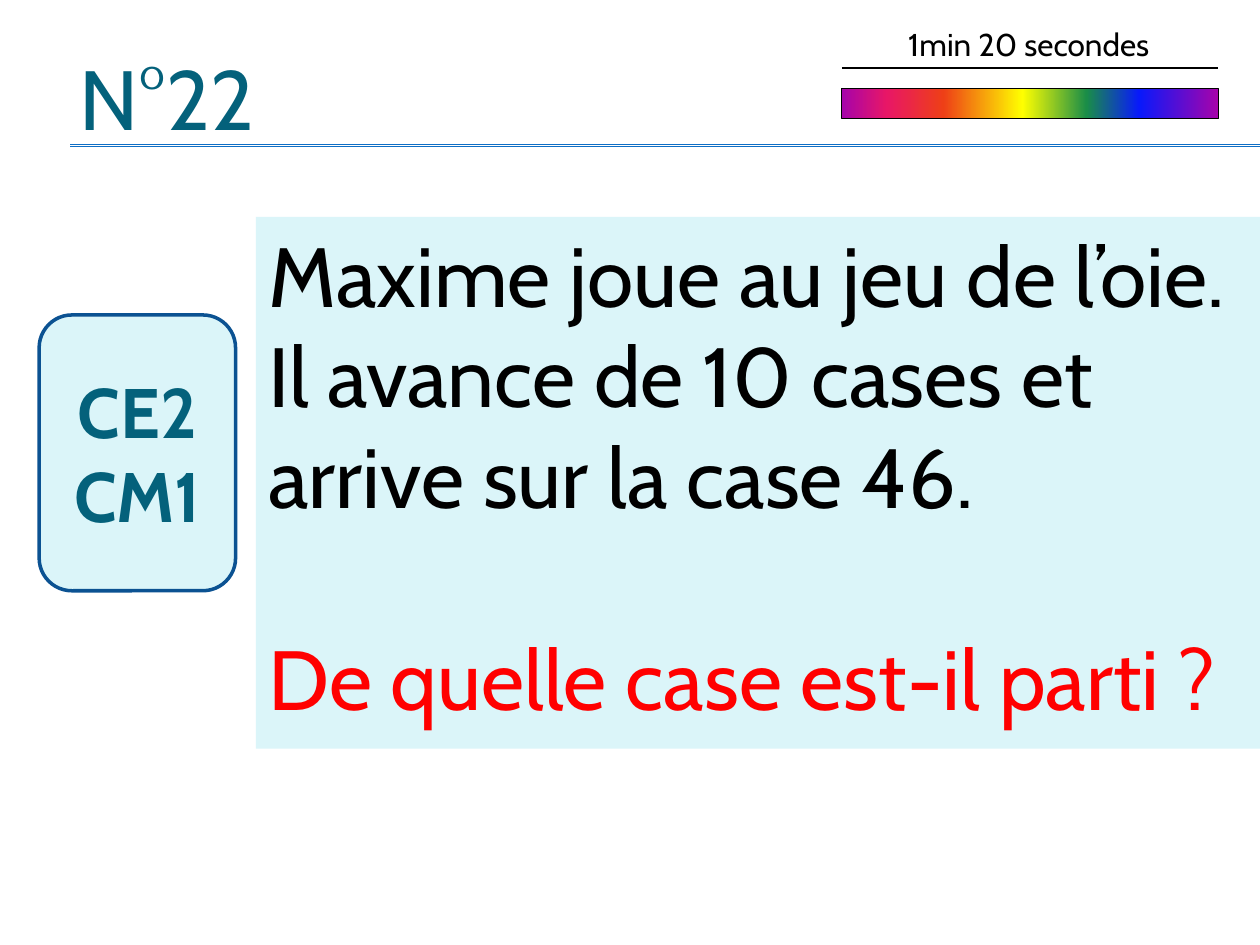
from lxml.etree import SubElement
from pptx import Presentation
from pptx.dml.color import RGBColor
from pptx.enum.shapes import MSO_CONNECTOR, MSO_SHAPE
from pptx.enum.text import MSO_ANCHOR, MSO_AUTO_SIZE, PP_ALIGN
from pptx.oxml.ns import qn
from pptx.util import Cm, Pt

# Content
TITLE = "N°22"
LEVELS = "CE2 CM1"
TIME = "1min 20 secondes"
PROBLEM = [
    ("Maxime joue au jeu de l’oie. Il avance de 10 cases et arrive sur la case 46.", "text"),
    ("De quelle case est-il parti ?", "question"),
]
RAINBOW = [(0, "A603AB"), (12, "E81766"), (27, "EE3F17"), (48, "FFFF00"),
           (65, "1A8D48"), (79, "0819FB"), (100, "A603AB")]

THEME = {
    "font": "Cabin",
    "colors": {"text": "000000", "question": "FF0000", "heading": "04617B",
               "panel": "DBF5F9", "rule": "0F6FC6", "border": "0B5292"},
    "sizes": {"large": 48, "level": 40, "time": 18},
}

# Layout in centimetres: left, top, width, height
PAGE_WIDTH, PAGE_HEIGHT = 25.4, 19.05
TITLE_AREA = (0.79, 0.79, 5.16, 2.34)
PANEL_AREA = (5.16, 4.37, PAGE_WIDTH - 5.16, 10.72)
LEVEL_AREA = (0.79, 6.35, 3.96, 5.56)
TIMER_AREA = (16.97, 1.78, 7.59, 0.61)
TIME_AREA = (16.97, 0.38, 7.54, 1.02)
RULE_LEFT, RULE_TOPS = 1.42, (2.92, 2.95)
TIME_RULE_TOP = 1.37
QUESTION_GAP = 58


def color(name):
    return RGBColor.from_string(THEME["colors"][name])


def place(shape, area):
    shape.left, shape.top, shape.width, shape.height = map(Cm, area)


def write(shape, lines, size, align, anchor, bold=False):
    frame = shape.text_frame
    frame.text = "\n".join(text for text, _ in lines)
    frame.word_wrap = True
    frame.auto_size = MSO_AUTO_SIZE.NONE
    frame.vertical_anchor = anchor
    for para, (_, tone) in zip(frame.paragraphs, lines):
        para.alignment = align
        para.space_before = Pt(0)
        for span in para.runs:
            span.font.name = THEME["font"]
            span.font.size = Pt(THEME["sizes"][size])
            span.font.bold = bold
            span.font.color.rgb = color(tone)


def add_rule(page, left, right, top, tone):
    rule = page.shapes.add_connector(
        MSO_CONNECTOR.STRAIGHT, Cm(left), Cm(top), Cm(right), Cm(top))
    rule.line.color.rgb = color(tone)
    rule.line.width = Pt(0.75)
    SubElement(rule.element.spPr, qn("a:effectLst"))


def add_box(page, kind, area, line_tone, line_width):
    box = page.shapes.add_shape(kind, *map(Cm, area))
    box.shadow.inherit = False
    box.line.color.rgb = color(line_tone)
    box.line.width = Pt(line_width)
    return box


def fill_rainbow(shape):
    shape.fill.gradient()
    shape.fill.gradient_angle = 0
    stops = shape.element.spPr.find(qn("a:gradFill")).find(qn("a:gsLst"))
    for stop in list(stops):
        stops.remove(stop)
    for percent, value in RAINBOW:
        stop = SubElement(stops, qn("a:gs"), pos=str(percent * 1000))
        SubElement(stop, qn("a:srgbClr"), val=value)


def fill_panel(shape):
    shape.fill.solid()
    shape.fill.fore_color.rgb = color("panel")


def main():
    deck = Presentation()
    deck.slide_width, deck.slide_height = Cm(PAGE_WIDTH), Cm(PAGE_HEIGHT)
    page = deck.slides.add_slide(deck.slide_layouts[1])

    # Title and its double rule
    title = page.shapes.title
    place(title, TITLE_AREA)
    write(title, [(TITLE, "heading")], "large", PP_ALIGN.CENTER, MSO_ANCHOR.MIDDLE)
    for top in RULE_TOPS:
        add_rule(page, RULE_LEFT, PAGE_WIDTH, top, "rule")

    # Problem and question
    panel = page.placeholders[1]
    place(panel, PANEL_AREA)
    fill_panel(panel)
    write(panel, PROBLEM, "large", PP_ALIGN.LEFT, MSO_ANCHOR.TOP)
    for para in panel.text_frame.paragraphs:
        properties = para._p.get_or_add_pPr()
        properties.set("marL", "0")
        properties.set("indent", "0")
        SubElement(properties, qn("a:buNone"))
    panel.text_frame.paragraphs[-1].space_before = Pt(QUESTION_GAP)

    # School levels
    levels = add_box(page, MSO_SHAPE.ROUNDED_RECTANGLE, LEVEL_AREA, "border", 2)
    fill_panel(levels)
    write(levels, [(LEVELS, "heading")], "level", PP_ALIGN.CENTER,
          MSO_ANCHOR.MIDDLE, bold=True)

    # Timer bar with its caption
    timer = add_box(page, MSO_SHAPE.RECTANGLE, TIMER_AREA, "text", 0.75)
    fill_rainbow(timer)
    add_rule(page, TIMER_AREA[0], TIMER_AREA[0] + TIMER_AREA[2], TIME_RULE_TOP, "text")
    caption = page.shapes.add_textbox(*map(Cm, TIME_AREA))
    write(caption, [(TIME, "text")], "time", PP_ALIGN.CENTER, MSO_ANCHOR.TOP)

    deck.save("out.pptx")


if __name__ == "__main__":
    main()
